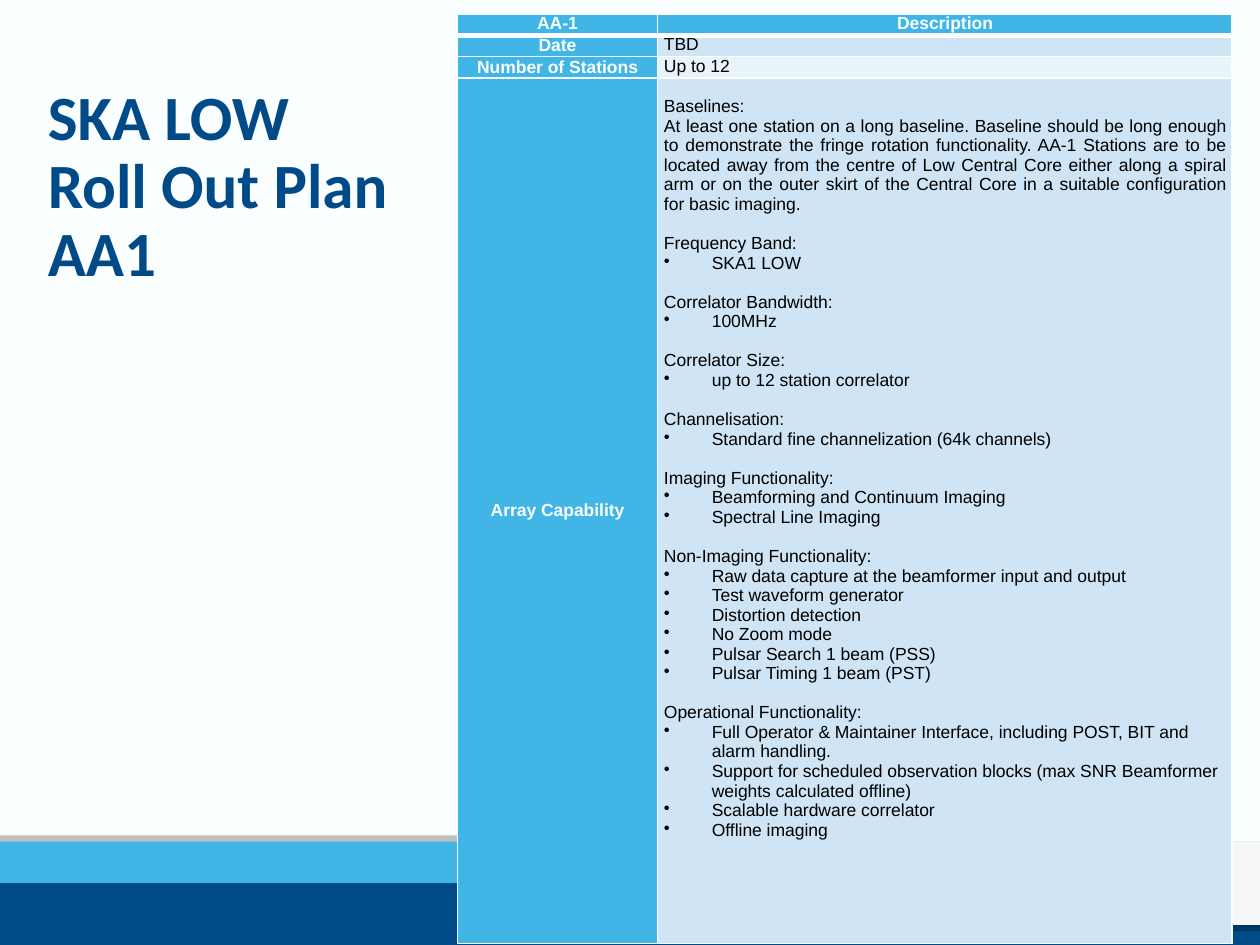
from dataclasses import dataclass

from lxml import etree
from pptx import Presentation
from pptx.dml.color import RGBColor
from pptx.enum.shapes import MSO_SHAPE
from pptx.enum.text import MSO_ANCHOR, PP_ALIGN
from pptx.oxml.ns import qn
from pptx.util import Inches, Pt

CENTER, JUSTIFY, LEFT = PP_ALIGN.CENTER, PP_ALIGN.JUSTIFY, PP_ALIGN.LEFT
TOP, MIDDLE = MSO_ANCHOR.TOP, MSO_ANCHOR.MIDDLE
RECTANGLE = MSO_SHAPE.RECTANGLE

WHITE, BLACK = "FBFEFF", "000000"
NAVY, DARK_NAVY, SKY = "004B87", "003865", "41B6E6"
GREY, PALE_GREY = "BFBFBF", "F7F7F7"
BAND, LIGHT_BAND = "CFE5F5", "E9F3FA"
LINE_GAP = 11.2
CURVE_STEPS = 10

Point = tuple[float, float]


@dataclass
class Section:
    heading: str
    bullets: tuple[str, ...] = ()
    body: str = ""


@dataclass
class Wave:
    color: str
    outline: list[Point]


@dataclass
class Fact:
    label: str
    value: str
    fill: str


def rgb(color: str) -> RGBColor:
    return RGBColor.from_string(color)


def curve(*controls: Point) -> list[Point]:
    (x0, y0), (x1, y1), (x2, y2), (x3, y3) = controls
    points = []
    for step in range(CURVE_STEPS + 1):
        t = step / CURVE_STEPS
        a, b, c, d = (1 - t) ** 3, 3 * t * (1 - t) ** 2, 3 * t * t * (1 - t), t ** 3
        points.append((a * x0 + b * x1 + c * x2 + d * x3,
                       a * y0 + b * y1 + c * y2 + d * y3))
    return points


CREST = (8.63, 6.96)
UPPER_SWELL = curve((9.78, 6.68), (9.08, 6.68), (8.83, 6.89), CREST)
LOWER_TIP = curve((7.95, 7.01), (8.4, 7.01), (8.54, 7), CREST)

WAVES = [
    Wave(GREY, [(10, 6.68), *UPPER_SWELL, (10, 6.96)]),
    Wave(GREY, [(0, 6.96), (0, 6.63),
                *curve((7.54, 6.63), (8.01, 6.63), (8.4, 6.77), CREST)]),
    Wave(DARK_NAVY, [(0, 6.96), (0, 7.01), *LOWER_TIP]),
    Wave(DARK_NAVY, [*curve(CREST, (8.87, 7.16), (9.18, 7.39), (9.77, 7.39)),
                     (10, 7.39), (10, 6.96)]),
    Wave(SKY, [(0, 7.01), (0, 6.68),
               *curve((7.54, 6.68), (8.01, 6.68), (8.37, 6.81), CREST),
               *reversed(LOWER_TIP)]),
    Wave(PALE_GREY, [(10, 6.68), *UPPER_SWELL,
                     *curve(CREST, (8.94, 7.14), (9.18, 7.34), (9.77, 7.34)),
                     (10, 7.34)]),
]

FACTS = [
    Fact("Date", "TBD", BAND),
    Fact("Number of Stations", "Up to 12", LIGHT_BAND),
]

CAPABILITIES = [
    Section("Baselines:", body=(
        "At least one station on a long baseline. Baseline should be long enough to "
        "demonstrate the fringe rotation functionality. AA-1 Stations are to be located "
        "away from the centre of Low Central Core either along a spiral arm or on the "
        "outer skirt of the Central Core in a suitable configuration for basic imaging.")),
    Section("Frequency Band:", ("SKA1 LOW",)),
    Section("Correlator Bandwidth:", ("100MHz",)),
    Section("Correlator Size:", ("up to 12 station correlator",)),
    Section("Channelisation:", ("Standard fine channelization (64k channels)",)),
    Section("Imaging Functionality:",
            ("Beamforming and Continuum Imaging", "Spectral Line Imaging")),
    Section("Non-Imaging Functionality:", (
        "Raw data capture at the beamformer input and output",
        "Test waveform generator", "Distortion detection", "No Zoom mode",
        "Pulsar Search 1 beam (PSS)", "Pulsar Timing 1 beam (PST)")),
    Section("Operational Functionality:", (
        "Full Operator & Maintainer Interface, including POST, BIT and alarm handling.",
        "Support for scheduled observation blocks (max SNR Beamformer weights "
        "calculated offline)",
        "Scalable hardware correlator", "Offline imaging")),
]


def paint(shape, color: str) -> None:
    shape.shadow.inherit = False
    shape.fill.solid()
    shape.fill.fore_color.rgb = rgb(color)
    shape.line.fill.background()


def draw_wave(slide, wave: Wave) -> None:
    start, *rest = [(Inches(x), Inches(y)) for x, y in wave.outline]
    builder = slide.shapes.build_freeform(*start)
    builder.add_line_segments(rest, close=True)
    paint(builder.convert_to_shape(), wave.color)


def add_run(paragraph, text: str, color: str, bold: bool = False,
            size: float = 10, face: str = "Arial") -> None:
    run = paragraph.add_run()
    run.text = text
    run.font.name, run.font.size, run.font.bold = face, Pt(size), bold
    run.font.color.rgb = rgb(color)


def add_bullet(paragraph) -> None:
    properties = paragraph._p.get_or_add_pPr()
    properties.set("marL", str(Inches(0.38)))
    properties.set("indent", str(-Inches(0.38)))
    etree.SubElement(properties, qn("a:buChar")).set("char", "•")


def format_cell(cell, fill: str, anchor=TOP, top: float = 1, bottom: float = 1) -> None:
    cell.margin_left = cell.margin_right = Inches(0.05)
    cell.margin_top = cell.margin_bottom = 0
    cell.vertical_anchor = anchor
    properties = cell._tc.get_or_add_tcPr()
    for side, width in (("L", 1), ("R", 1), ("T", top), ("B", bottom)):
        border = etree.SubElement(properties, qn(f"a:ln{side}"))
        border.set("w", str(Pt(width)))
        solid = etree.SubElement(border, qn("a:solidFill"))
        etree.SubElement(solid, qn("a:srgbClr")).set("val", WHITE)
    cell.fill.solid()
    cell.fill.fore_color.rgb = rgb(fill)


def write_cell(cell, text: str, color: str, alignment=CENTER, bold: bool = True) -> None:
    paragraph = cell.text_frame.paragraphs[0]
    paragraph.alignment = alignment
    add_run(paragraph, text, color, bold)


def write_capabilities(cell, sections: list[Section]) -> None:
    frame = cell.text_frame
    for index, section in enumerate(sections):
        heading = frame.add_paragraph() if index else frame.paragraphs[0]
        heading.alignment = LEFT
        if index:
            heading.space_before = Pt(LINE_GAP)
        add_run(heading, section.heading, BLACK)
        if section.body:
            body = frame.add_paragraph()
            body.alignment = JUSTIFY
            add_run(body, section.body, BLACK)
        for item in section.bullets:
            bullet = frame.add_paragraph()
            add_bullet(bullet)
            add_run(bullet, item, BLACK)


def draw_title(slide, lines: list[str]) -> None:
    title = slide.shapes.add_textbox(Inches(0.38), Inches(0.68), Inches(9.25), Inches(0.94))
    frame = title.text_frame
    frame.word_wrap = True
    frame.margin_left = frame.margin_right = frame.margin_top = frame.margin_bottom = 0
    paragraph = frame.paragraphs[0]
    paragraph.line_spacing = 0.9
    for index, line in enumerate(lines):
        if index:
            paragraph.add_line_break()
        add_run(paragraph, line, NAVY, True, 36, "Calibri")


def draw_plan(slide) -> None:
    plan = slide.shapes.add_table(4, 2, Inches(3.63), Inches(0.11),
                                  Inches(6.15), Inches(7.38)).table
    for column, width in zip(plan.columns, (1.59, 4.56)):
        column.width = Inches(width)
    for row, height in zip(plan.rows, (0.17, 0.17, 0.17, 6.87)):
        row.height = Inches(height)
    for column, heading in enumerate(("AA-1", "Description")):
        format_cell(plan.cell(0, column), SKY, bottom=3)
        write_cell(plan.cell(0, column), heading, WHITE)
    for row, fact in enumerate(FACTS, start=1):
        top = 3 if row == 1 else 1
        format_cell(plan.cell(row, 0), SKY, MIDDLE, top)
        write_cell(plan.cell(row, 0), fact.label, WHITE)
        format_cell(plan.cell(row, 1), fact.fill, top=top)
        write_cell(plan.cell(row, 1), fact.value, BLACK, JUSTIFY, False)
    format_cell(plan.cell(3, 0), SKY, MIDDLE)
    write_cell(plan.cell(3, 0), "Array Capability", WHITE)
    format_cell(plan.cell(3, 1), BAND)
    plan.cell(3, 1).margin_top = Inches(0.15)
    write_capabilities(plan.cell(3, 1), CAPABILITIES)


def main() -> None:
    deck = Presentation()
    deck.slide_width, deck.slide_height = Inches(10), Inches(7.5)
    slide = deck.slides.add_slide(deck.slide_layouts[6])
    slide.background.fill.solid()
    slide.background.fill.fore_color.rgb = rgb(WHITE)
    footer = slide.shapes.add_shape(RECTANGLE, 0, Inches(6.96), Inches(10), Inches(0.54))
    paint(footer, NAVY)
    for wave in WAVES:
        draw_wave(slide, wave)
    draw_title(slide, ["SKA LOW", "Roll Out Plan", "AA1"])
    draw_plan(slide)
    deck.save("out.pptx")


if __name__ == "__main__":
    main()
